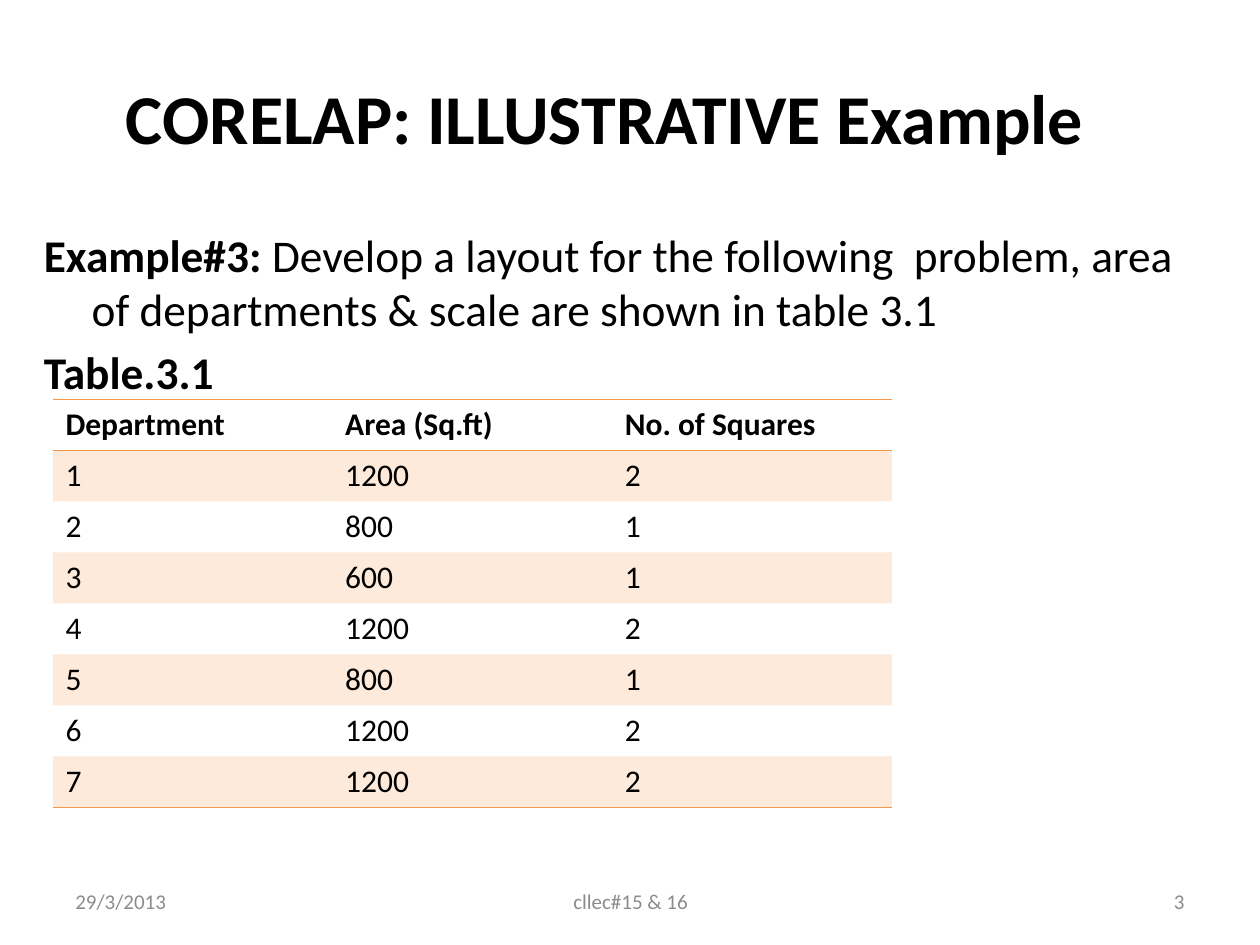
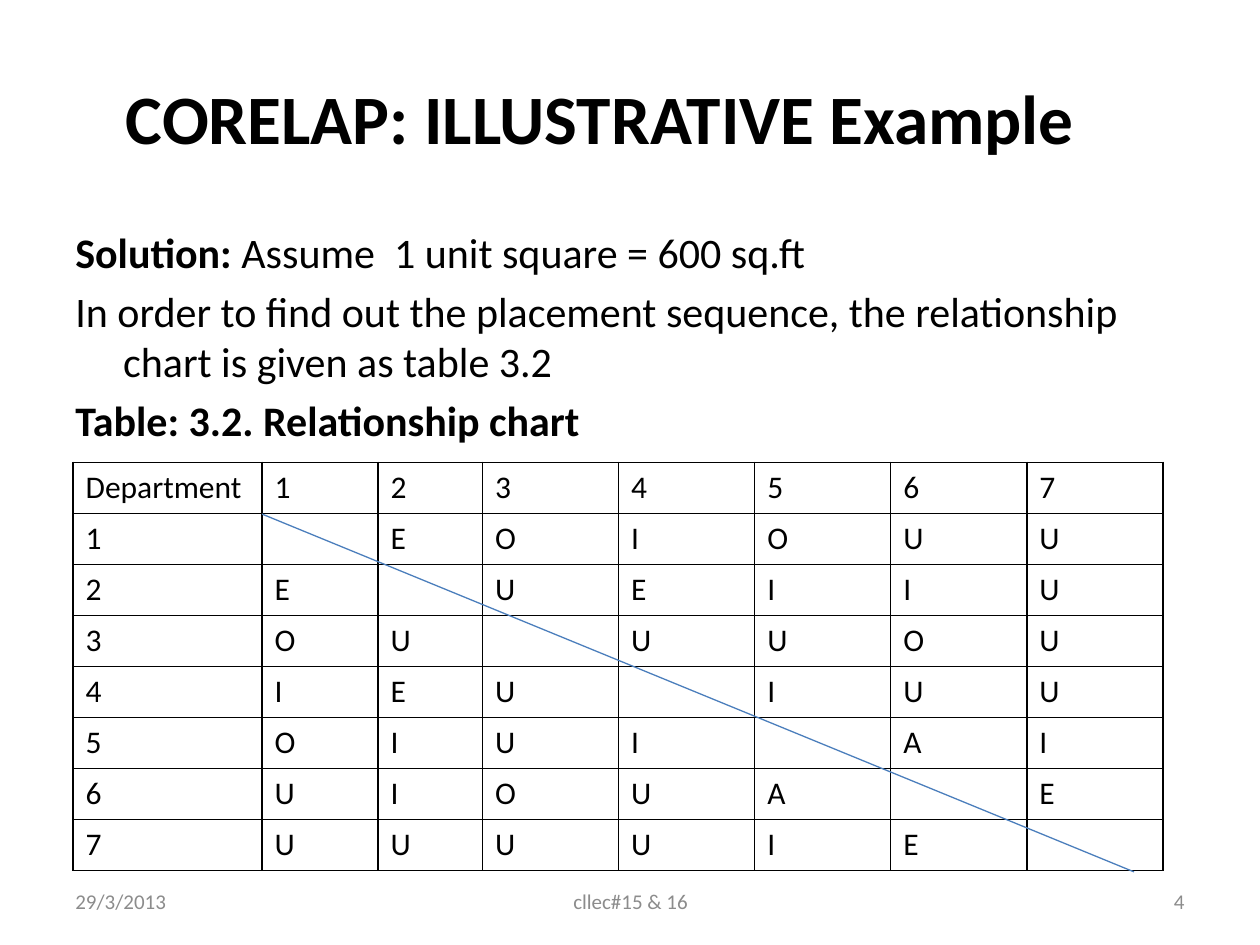
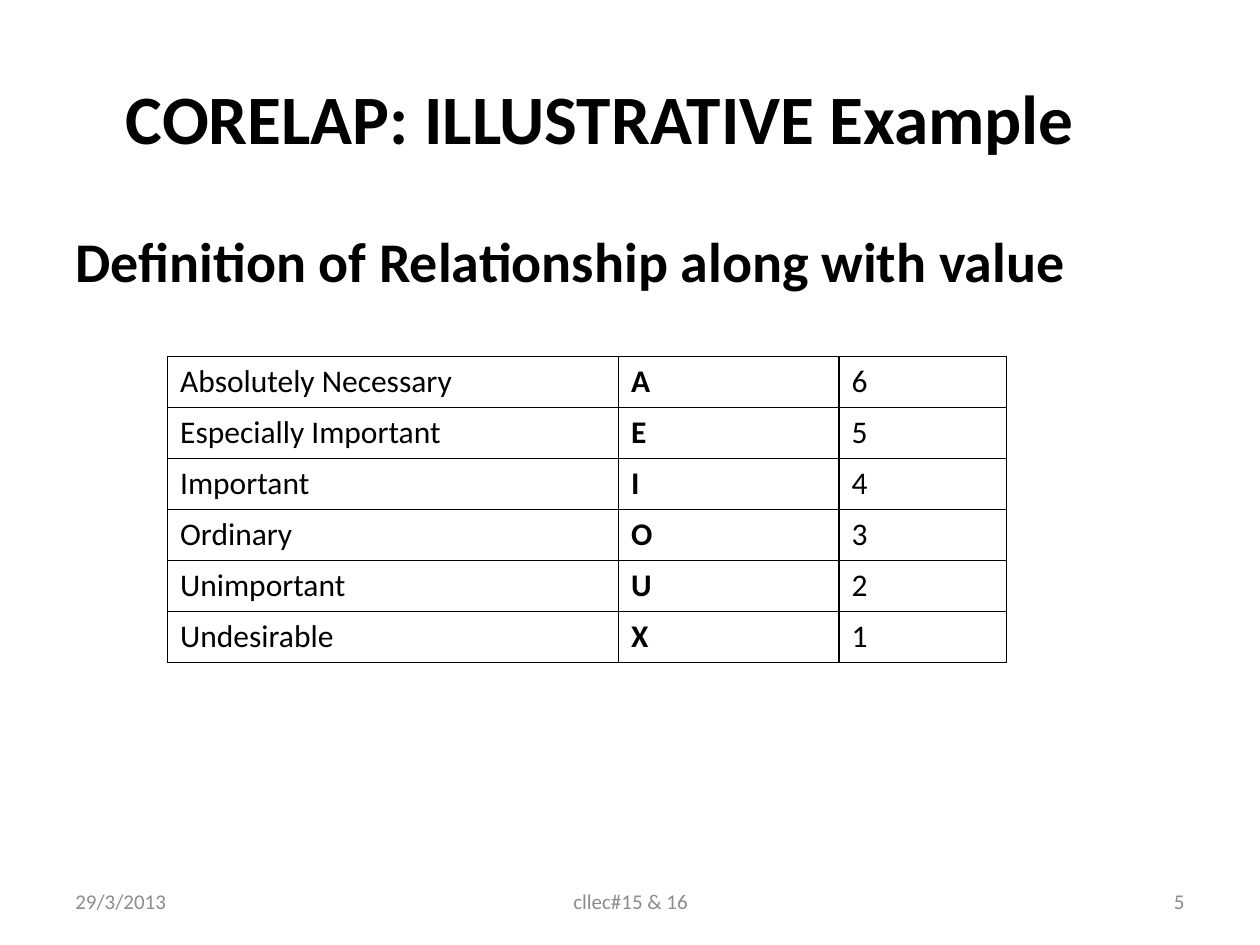
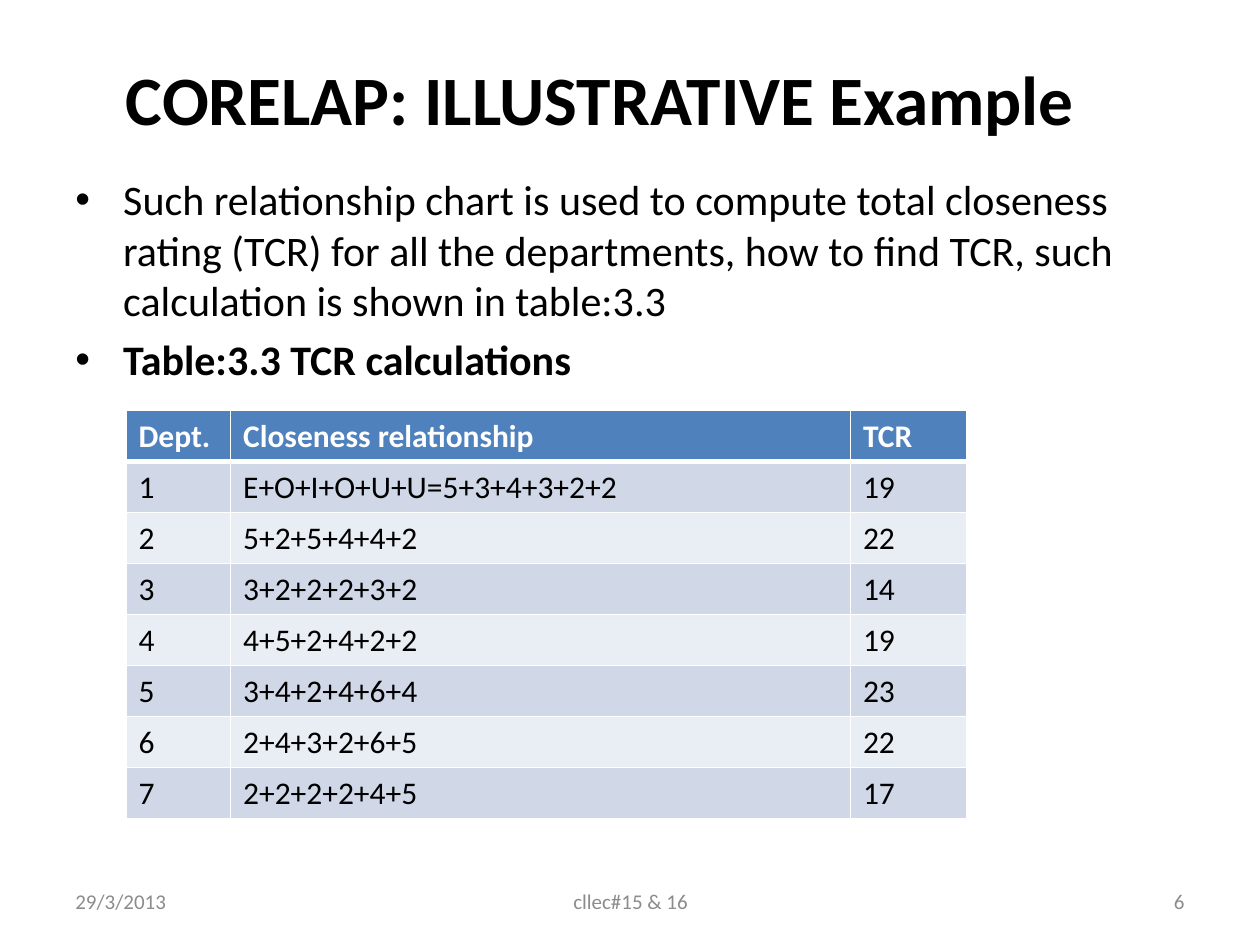
"""Build four slides that work through a CORELAP facility layout example."""
from lxml.etree import SubElement
from pptx import Presentation
from pptx.dml.color import RGBColor
from pptx.enum.shapes import MSO_CONNECTOR as LineKind
from pptx.enum.text import MSO_ANCHOR as Anchor, PP_ALIGN as Align
from pptx.oxml import parse_xml
from pptx.oxml.ns import nsdecls, qn
from pptx.util import Inches, Pt

FONT = "Calibri"
COLORS = {
    "black": "000000", "white": "FFFFFF", "grey": "8C8C8C",
    "orange": "F79646", "blue": "4F81BD", "diagonal": "4B7EBC",
    "dark band": "D0D8E8", "light band": "E9EDF4",
}
TITLE = "CORELAP: ILLUSTRATIVE Example\t"
DATE = "29/3/2013"
LECTURE = "cllec#15 & 16"
FIRST_NUMBER = 3
ROW_HEIGHT = 0.405
INDENT = 0.38
NO_STYLE = "{2D5ABB26-0587-4C30-8999-92F81FD0307C}"

AREAS = [1200, 800, 600, 1200, 800, 1200, 1200]
SQUARES = [2, 1, 1, 2, 1, 2, 2]
RELATIONS = [" EOIOUU", "E UEIIU", "OU UUOU", "IEU IUU", "OIUI AI", "UIOUA E", "UUUUIE "]
RATINGS = [
    ("Absolutely Necessary", "A", 6), ("Especially Important", "E", 5),
    ("Important", "I", 4), ("Ordinary", "O", 3),
    ("Unimportant", "U", 2), ("Undesirable", "X", 1),
]
CLOSENESS = [
    ("E+O+I+O+U+U=5+3+4+3+2+2", 19), ("5+2+5+4+4+2", 22), ("3+2+2+2+3+2", 14),
    ("4+5+2+4+2+2", 19), ("3+4+2+4+6+4", 23), ("2+4+3+2+6+5", 22), ("2+2+2+2+4+5", 17),
]

SLIDES = [
    {
        "title size": 40, "title height": 1.25,
        "body": (0.25, 1.75, 9.5, 4.95), "size": 25.9,
        "text": [
            [("Example#3: ", True), ("Develop a layout for the following  problem, "
              "area of departments & scale are shown in table 3.1", False)],
            [("Table.3.1", True)],
        ],
        "table": {
            "at": (0.42, 3.17), "widths": [2.22] * 3, "look": "ruled",
            "rows": [("Department", "Area (Sq.ft)", "No. of Squares")]
            + list(zip(range(1, 8), AREAS, SQUARES)),
        },
    },
    {
        "body": (0.5, 1.75, 9, 5.17),
        "text": [
            [("Solution: ", True), ("Assume  1 unit square = 600 sq.ft", False)],
            [("In order to find out the placement sequence, the relationship chart "
              "is given as table 3.2", False)],
            [("Table: 3.2. Relationship chart", True)],
        ],
        "table": {
            "at": (0.58, 3.67), "widths": [1.5, 0.92, 0.83] + [1.08] * 5, "look": "grid",
            "rows": [("Department", *range(1, 8))]
            + [(number, *row) for number, row in enumerate(RELATIONS, 1)],
        },
        "diagonal": (2.08, 4.08, 9, 6.92),
    },
    {
        "body": (0.5, 1.75, 9, 4.95), "size": 32,
        "text": [[("Definition of Relationship along with value", True)]],
        "table": {
            "at": (1.33, 2.83), "widths": [3.58, 1.75, 1.33], "look": "grid",
            "rows": RATINGS, "bold column": 1,
        },
    },
    {
        "title height": 0.95, "body": (0.5, 1.33, 9, 5.58), "bullet": "•",
        "text": [
            [("Such relationship chart is used to compute total closeness rating (TCR) "
              "for all the departments, how to find TCR, such calculation is shown in "
              "table:3.3", False)],
            [("Table:3.3 TCR calculations", True)],
        ],
        "table": {
            "at": (1, 3.26), "widths": [0.83, 4.92, 0.92], "look": "banded",
            "rows": [("Dept.", "Closeness relationship", "TCR")]
            + [(number, *row) for number, row in enumerate(CLOSENESS, 1)],
        },
    },
]


def rgb(name):
    return RGBColor.from_string(COLORS[name])


def add_span(para, text, size, color="black", bold=False):
    span = para.add_run()
    span.text = text
    for name, value in {"name": FONT, "size": Pt(size), "bold": bold}.items():
        setattr(span.font, name, value)
    span.font.color.rgb = rgb(color)


def add_frame(page, at, anchor=Anchor.MIDDLE):
    frame = page.shapes.add_textbox(*map(Inches, at)).text_frame
    frame.word_wrap = True
    frame.vertical_anchor = anchor
    return frame


def add_label(page, at, text, size, align, **style):
    para = add_frame(page, at).paragraphs[0]
    para.alignment = align
    add_span(para, text, size, **style)


def add_body(page, content):
    size, bullet = content.get("size", 24), content.get("bullet")
    frame = add_frame(page, content["body"], Anchor.TOP)
    for index, spans in enumerate(content["text"]):
        para = frame.add_paragraph() if index else frame.paragraphs[0]
        para.space_before = Pt(round(size * 0.2, 1) if index else 0)
        props = para._p.get_or_add_pPr()
        props.set("marL", str(Inches(INDENT)))
        props.set("indent", str(-Inches(INDENT)))
        if bullet:
            SubElement(props, qn("a:buFont"), typeface="Arial")
            SubElement(props, qn("a:buChar"), char=bullet)
        for text, bold in spans:
            add_span(para, text, size, bold=bold)


def cell_look(look, row, last):
    """Return fill, fill opacity, text colour, boldness and borders of a row."""
    header, odd = row == 0, row % 2 == 1
    if look == "grid":
        return None, 100, "black", False, {side: ("black", 1) for side in "LRTB"}
    if look == "ruled":
        sides = "TB" if header else "B" if row == last else ""
        borders = {side: ("orange", 1) for side in sides}
        return "orange" if odd else None, 20, "black", header, borders
    borders = {side: ("white", 1) for side in "LRTB"}
    if header:
        return "blue", 100, "white", True, {**borders, "B": ("white", 3)}
    if row == 1:
        borders["T"] = ("white", 3)
    return "dark band" if odd else "light band", 100, "black", False, borders


def paint_cell(cell, fill, opacity, borders):
    props = cell._tc.get_or_add_tcPr()
    if fill:
        cell.fill.solid()
        cell.fill.fore_color.rgb = rgb(fill)
        if opacity < 100:
            SubElement(props.find(".//" + qn("a:srgbClr")), qn("a:alpha"), val=str(opacity * 1000))
    else:
        cell.fill.background()
    for position, (side, (color, width)) in enumerate(borders.items()):
        props.insert(position, parse_xml(
            f'<a:ln{side} {nsdecls("a")} w="{Pt(width)}"><a:solidFill>'
            f'<a:srgbClr val="{COLORS[color]}"/></a:solidFill></a:ln{side}>'))


def add_grid(page, at, widths, look, rows, bold_column=None):
    size = (sum(widths), ROW_HEIGHT * len(rows))
    table = page.shapes.add_table(len(rows), len(widths), *map(Inches, at + size)).table
    table._tbl.tblPr.find(qn("a:tableStyleId")).text = NO_STYLE
    for column, width in zip(table.columns, widths):
        column.width = Inches(width)
    for row, values in enumerate(rows):
        table.rows[row].height = Inches(ROW_HEIGHT)
        fill, opacity, color, bold, borders = cell_look(look, row, len(rows) - 1)
        for column, value in enumerate(values):
            cell = table.cell(row, column)
            paint_cell(cell, fill, opacity, borders)
            if str(value).strip():
                add_span(cell.text_frame.paragraphs[0], str(value), 18, color,
                         bold or column == bold_column)


def add_diagonal(page, ends):
    line = page.shapes.add_connector(LineKind.STRAIGHT, *map(Inches, ends))
    line.line.color.rgb = rgb("diagonal")
    line.line.width = Pt(0.75)
    SubElement(line._element.spPr, qn("a:effectLst"))


def add_footers(page, number):
    for left, width, text, align in (
        (0.5, 2.33, DATE, Align.LEFT),
        (3.42, 3.17, LECTURE, Align.CENTER),
        (7.17, 2.33, str(number), Align.RIGHT),
    ):
        add_label(page, (left, 6.95, width, 0.4), text, 12, align, color="grey")


def main():
    deck = Presentation()
    deck.slide_width, deck.slide_height = Inches(10), Inches(7.5)
    for number, content in enumerate(SLIDES, FIRST_NUMBER):
        page = deck.slides.add_slide(deck.slide_layouts[6])
        title_at = (0.5, 0.3, 9, content.get("title height", 1.25))
        add_label(page, title_at, TITLE, content.get("title size", 39.6), Align.CENTER, bold=True)
        add_body(page, content)
        add_footers(page, number)
        table = content["table"]
        add_grid(page, table["at"], table["widths"], table["look"], table["rows"],
                 table.get("bold column"))
        if "diagonal" in content:
            add_diagonal(page, content["diagonal"])
    deck.save("out.pptx")


if __name__ == "__main__":
    main()
